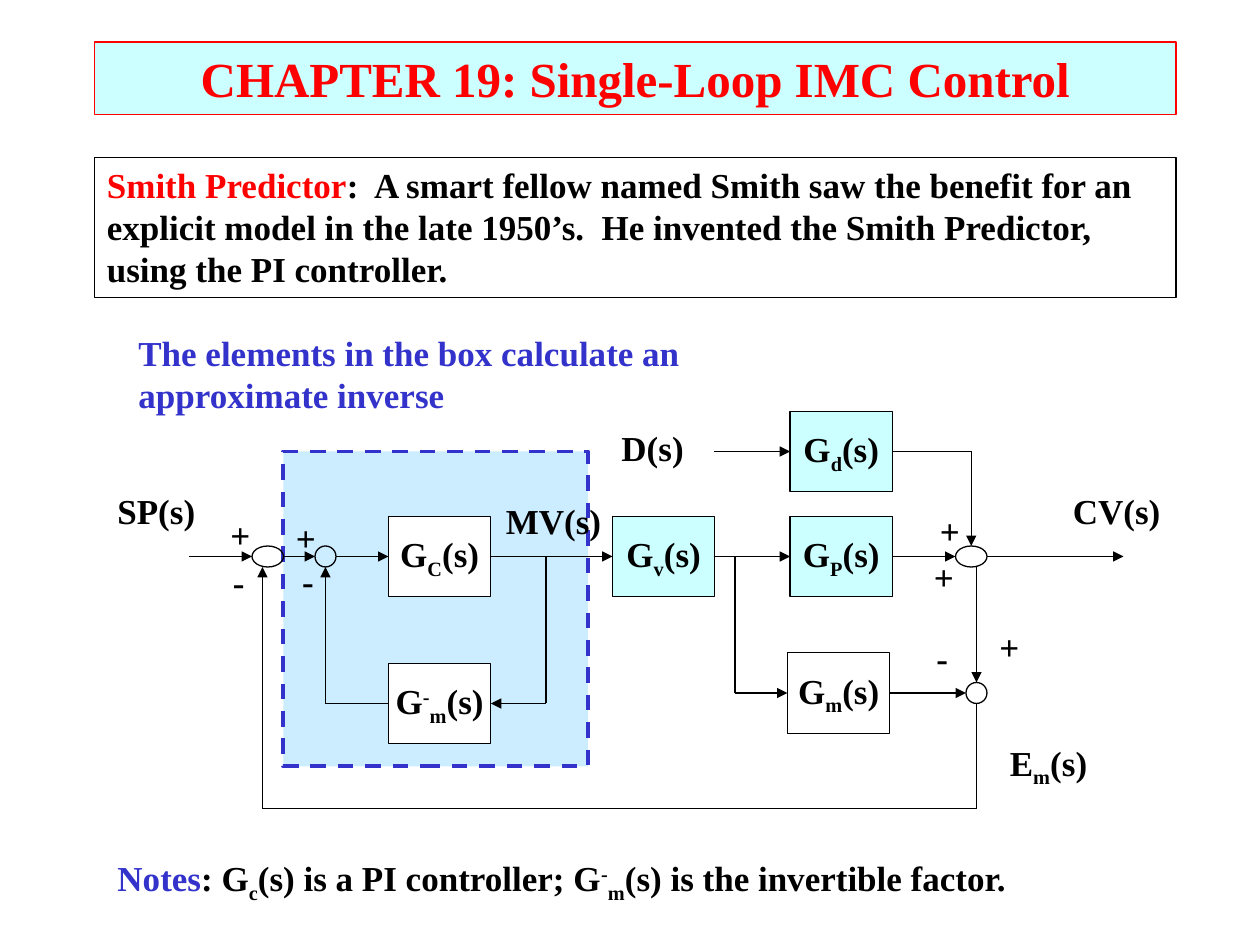
from lxml.etree import SubElement
from pptx import Presentation
from pptx.dml.color import RGBColor
from pptx.enum.dml import MSO_LINE
from pptx.enum.shapes import MSO_CONNECTOR, MSO_SHAPE
from pptx.enum.text import MSO_ANCHOR, PP_ALIGN
from pptx.oxml.ns import qn
from pptx.util import Pt

THEME = {
    "black": RGBColor(0, 0, 0),
    "white": RGBColor(255, 255, 255),
    "red": RGBColor(255, 0, 0),
    "blue": RGBColor(0x33, 0x33, 0xCC),
    "aqua": RGBColor(0xCC, 0xFF, 0xFF),
    "sky": RGBColor(0xCC, 0xEC, 0xFF),
    "title": Pt(28),
    "body": Pt(20),
    "format": {"name": "Times New Roman", "bold": True},
}
BASELINES = {"_": "-25000", "^": "30000"}


def write(holder, pieces, color="black", size="body", lead=None, wrap=True,
          align=PP_ALIGN.LEFT, anchor=MSO_ANCHOR.TOP):
    frame = holder.text_frame
    for key, value in {"word_wrap": wrap, "vertical_anchor": anchor}.items():
        setattr(frame, key, value)
    paragraph = frame.paragraphs[0]
    paragraph.alignment = align
    for index, piece in enumerate(pieces.split("|")):
        run = paragraph.add_run()
        run.text = piece.lstrip("_^")
        for key, value in {**THEME["format"], "size": THEME[size]}.items():
            setattr(run.font, key, value)
        run.font.color.rgb = THEME[lead if lead and index == 0 else color]
        if piece[0] in BASELINES:
            run.font._element.set("baseline", BASELINES[piece[0]])


def outline(kind, left, top, width, height, fill=None, edge="black", weight=0.75):
    shape = slide.shapes.add_shape(kind, Pt(left), Pt(top), Pt(width), Pt(height))
    shape.shadow.inherit = False
    if fill:
        shape.fill.solid()
        shape.fill.fore_color.rgb = THEME[fill]
    else:
        shape.fill.background()
    shape.line.color.rgb = THEME[edge]
    shape.line.width = Pt(weight)
    return shape


deck = Presentation()
deck.slide_width, deck.slide_height = Pt(720), Pt(540)
slide = deck.slides.add_slide(deck.slide_layouts[6])

inverse_region = outline(MSO_SHAPE.RECTANGLE, 162, 258, 174, 180, "sky", "blue", 2.25)
inverse_region.line.dash_style = MSO_LINE.DASH

chapter = outline(MSO_SHAPE.RECTANGLE, 54, 24, 618, 41.5, "aqua", "red")
write(chapter, "CHAPTER 19: Single-Loop IMC Control", "red", "title", align=PP_ALIGN.CENTER)

predictor = outline(MSO_SHAPE.RECTANGLE, 54, 90, 618, 80)
write(predictor, "Smith Predictor|:  A smart fellow named Smith saw the benefit for an "
      "explicit model in the late 1950’s.  He invented the Smith Predictor, "
      "using the PI controller.", lead="red")

disturbance_y, main_y, model_y, inverse_y, return_y = 258, 318, 396, 402, 462
block_width, block_height = 58.5, 46
blocks = {}
for block, left, middle, fill, formula in [
    ("disturbance", 451.5, disturbance_y, "aqua", "G|_d|(s)"),
    ("process", 451.5, main_y, "aqua", "G|_P|(s)"),
    ("valve", 350, main_y, "aqua", "G|_v|(s)"),
    ("controller", 222, main_y, "white", "G|_C|(s)"),
    ("model", 450, model_y, None, "G|_m|(s)"),
    ("inverse", 222, inverse_y, "white", "G|^-|_m|(s)"),
]:
    blocks[block] = outline(MSO_SHAPE.RECTANGLE, left, middle - block_height / 2,
                            block_width, block_height, fill)
    write(blocks[block], formula, wrap=False, align=PP_ALIGN.CENTER, anchor=MSO_ANCHOR.MIDDLE)

for left, middle, width in [(144, main_y, 18), (546, main_y, 18),
                            (180, main_y, 12), (552, model_y, 12)]:
    outline(MSO_SHAPE.OVAL, left, middle - 6, width, 12)

LEFT, RIGHT = 1, 3
for start, end, arrow, source, target in [
    ((108, main_y), (144, main_y), True, None, None),
    ((162, main_y), (180, main_y), True, None, None),
    ((192, main_y), (222, main_y), True, None, ("controller", LEFT)),
    ((280.5, main_y), (350, main_y), True, ("controller", RIGHT), ("valve", LEFT)),
    ((408.5, main_y), (451.5, main_y), True, ("valve", RIGHT), ("process", LEFT)),
    ((510, main_y), (546, main_y), True, ("process", RIGHT), None),
    ((564, main_y), (642, main_y), True, None, None),
    ((408, disturbance_y), (451.5, disturbance_y), True, None, ("disturbance", LEFT)),
    ((510, disturbance_y), (555, disturbance_y), False, ("disturbance", RIGHT), None),
    ((555, disturbance_y), (555, main_y - 6), True, None, None),
    ((420, main_y), (420, model_y), False, None, None),
    ((420, model_y), (450, model_y), True, None, ("model", LEFT)),
    ((508.5, model_y), (552, model_y), True, ("model", RIGHT), None),
    ((558, main_y + 6), (558, model_y - 6), True, None, None),
    ((558, model_y + 6), (558, return_y), False, None, None),
    ((558, return_y), (150, return_y), False, None, None),
    ((150, return_y), (150, main_y + 6), True, None, None),
    ((312, main_y), (312, inverse_y), False, None, None),
    ((312, inverse_y), (280.5, inverse_y), True, None, ("inverse", RIGHT)),
    ((222, inverse_y), (186, inverse_y), False, ("inverse", LEFT), None),
    ((186, inverse_y), (186, main_y + 6), True, None, None),
]:
    signal = slide.shapes.add_connector(MSO_CONNECTOR.STRAIGHT, *map(Pt, start + end))
    signal.line.color.rgb = THEME["black"]
    signal.line.width = Pt(0.75)
    if arrow:
        SubElement(signal.line._get_or_add_ln(), qn("a:tailEnd"), type="triangle")
    SubElement(signal._element.spPr, qn("a:effectLst"))
    if source:
        signal.begin_connect(blocks[source[0]], source[1])
    if target:
        signal.end_connect(blocks[target[0]], target[1])

for caption, left, top, width, height, color, lead in [
    ("D(s)", 348, 240, 54, 31, "black", None),
    ("CV(s)", 606, 276, 66, 31, "black", None),
    ("SP(s)", 60, 276, 66, 31, "black", None),
    ("MV(s)", 282, 282, 78, 31, "black", None),
    ("E|_m|(s)", 570, 420, 78, 31, "black", None),
    ("+", 530, 287.5, 26, 31, "black", None),
    ("+", 526.5, 314, 26, 31, "black", None),
    ("+", 124.5, 290, 26, 31, "black", None),
    ("+", 162, 291.5, 26, 31, "black", None),
    ("+", 564, 354, 26, 31, "black", None),
    ("-", 126, 317, 21, 31, "black", None),
    ("-", 165.5, 316, 21, 31, "black", None),
    ("-", 528, 360, 21, 31, "black", None),
    ("The elements in the box calculate an approximate inverse",
     72, 186, 366, 55.5, "blue", None),
    ("Notes|: G|_c|(s) is a PI controller; G|^-|_m|(s) is the invertible factor.",
     60, 486, 630, 31, "black", "blue"),
]:
    label = slide.shapes.add_textbox(Pt(left), Pt(top), Pt(width), Pt(height))
    write(label, caption, color, lead=lead, wrap=len(caption) > 1)

deck.save("out.pptx")
